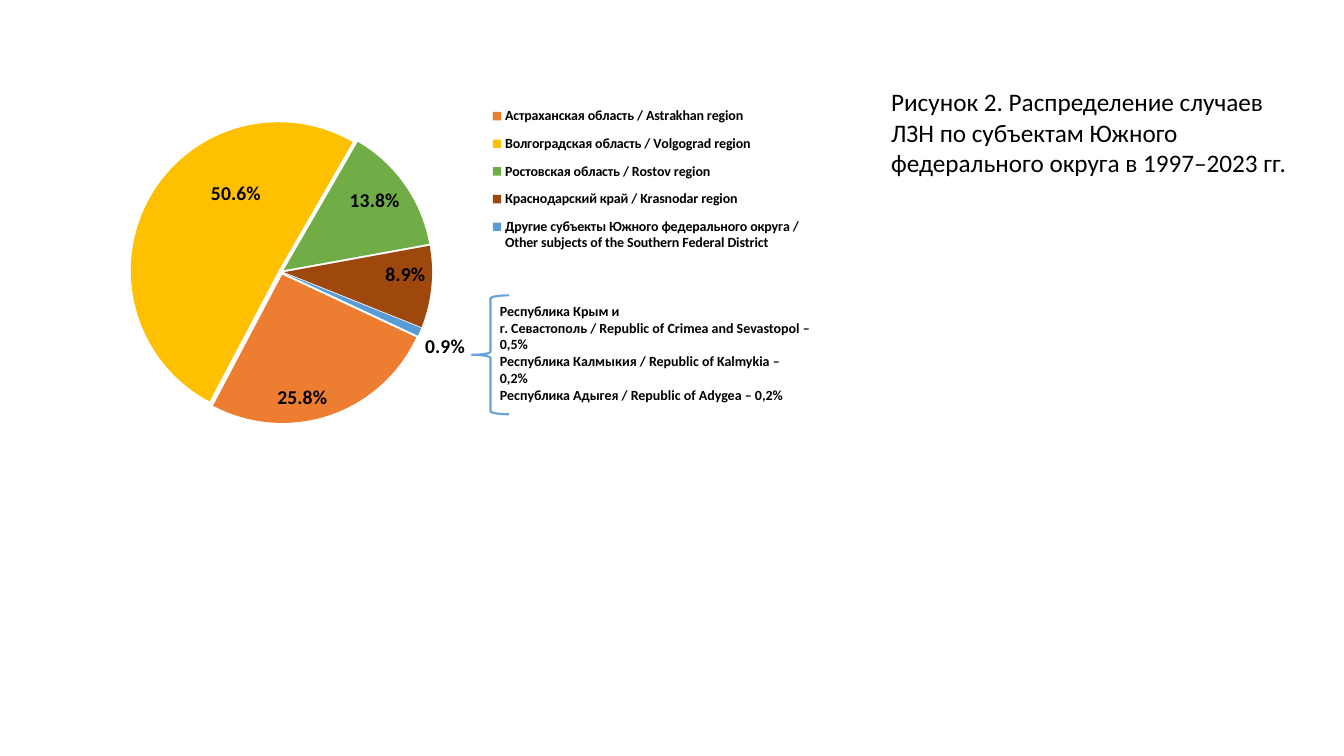
from lxml import etree
from pptx import Presentation
from pptx.chart.data import CategoryChartData
from pptx.dml.color import RGBColor
from pptx.enum.chart import XL_CHART_TYPE, XL_LABEL_POSITION, XL_LEGEND_POSITION
from pptx.enum.shapes import MSO_SHAPE
from pptx.util import Inches, Pt

PIE = XL_CHART_TYPE.PIE
RIGHT = XL_LEGEND_POSITION.RIGHT
INSIDE = XL_LABEL_POSITION.INSIDE_END
OUTSIDE = XL_LABEL_POSITION.OUTSIDE_END
CENTER = XL_LABEL_POSITION.CENTER
BRACE = MSO_SHAPE.LEFT_BRACE
FONT = "Calibri"
NS = "http://schemas.openxmlformats.org/drawingml/2006/chart"

# Region, share, colour, label position
REGIONS = [
    ("Астраханская область / Astrakhan region", 0.258, "ED7D31", INSIDE),
    ("Волгоградская область / Volgograd region", 0.506, "FFC000", CENTER),
    ("Ростовская область / Rostov region", 0.138, "70AD47", INSIDE),
    ("Краснодарский край / Krasnodar region", 0.089, "9E480E", INSIDE),
    ("Другие субъекты Южного федерального округа / "
     "Other subjects of the Southern Federal District", 0.009, "5B9BD5", OUTSIDE),
]
OTHERS = [
    "Республика Крым и",
    "г. Севастополь / Republic of Crimea and Sevastopol – 0,5%",
    "Республика Калмыкия / Republic of Kalmykia –",
    "0,2%",
    "Республика Адыгея / Republic of Adygea – 0,2%",
]
TITLE = ("Рисунок 2. Распределение случаев ЛЗН по субъектам Южного "
         "федерального округа в 1997–2023 гг.")


def color(code):
    return RGBColor.from_string(code)


def style(font, size, bold=False, code="000000"):
    font.name, font.size, font.bold = FONT, Pt(size), bold
    font.color.rgb = color(code)


def node(tag, **attrs):
    item = etree.Element(f"{{{NS}}}{tag}")
    for key, value in attrs.items():
        item.set(key, str(value))
    return item


def layout(**values):
    """Manual chart layout with fractions of the chart size."""
    outer = node("layout")
    inner = node("manualLayout")
    outer.append(inner)
    for tag, value in values.items():
        inner.append(node(tag, val=value))
    return outer


def place(parent, after, item):
    """Put a chart element right behind the named child."""
    parent.find(f"{{{NS}}}{after}").addnext(item)


def add_text(slide, box, lines, size, bold=False):
    frame = slide.shapes.add_textbox(*map(Inches, box)).text_frame
    frame.word_wrap = True
    for i, line in enumerate(lines):
        para = frame.paragraphs[0] if i == 0 else frame.add_paragraph()
        run = para.add_run()
        run.text = line
        style(run.font, size, bold)


def add_pie(slide, box):
    data = CategoryChartData(number_format="0.0%")
    data.categories = [region[0] for region in REGIONS]
    data.add_series("Series 1", [region[1] for region in REGIONS])
    chart = slide.shapes.add_chart(PIE, *map(Inches, box), data).chart
    chart.has_title = False
    style(chart.font, 10)

    # Legend
    chart.has_legend = True
    legend = chart.legend
    legend.position, legend.include_in_layout = RIGHT, False
    style(legend.font, 10, True)
    old = legend._element.find(f"{{{NS}}}layout")
    if old is not None:
        legend._element.remove(old)
    place(legend._element, "legendPos",
          layout(xMode="edge", yMode="edge", x=0.57, y=0.04, w=0.43, h=0.45))

    # Plot area, rotation and gaps between slices
    area = chart._chartSpace.chart.plotArea
    old = area.find(f"{{{NS}}}layout")
    if old is not None:
        area.remove(old)
    area.insert(0, layout(layoutTarget="inner", xMode="edge", yMode="edge",
                          x=0.083, y=0.032, w=0.411, h=0.968))
    plot = chart.plots[0]
    plot.vary_by_categories = True
    series = plot.series[0]
    place(series._element, "tx", node("explosion", val=2))
    place(area.find(f"{{{NS}}}pieChart"), "ser", node("firstSliceAng", val=115))

    # Slices and labels
    for i, (_, _, code, spot) in enumerate(REGIONS):
        point = series.points[i]
        point.format.fill.solid()
        point.format.fill.fore_color.rgb = color(code)
        label = point.data_label
        style(label.font, 14, True)
        label.position = spot
        if spot == CENTER:
            entry = series._element.find(f".//{{{NS}}}dLbl[{{{NS}}}idx][{i + 1}]")
            place(entry, "idx", layout(x=0.03, y=-0.11))


def add_others(slide, box):
    left, top, width, height = box
    brace = slide.shapes.add_shape(
        BRACE, *map(Inches, (left, top, 0.37, height)))
    brace.shadow.inherit = False
    brace.fill.background()
    brace.line.color.rgb = color("67A2D8")
    brace.line.width = Pt(1.5)
    add_text(slide, (left + 0.18, top + 0.02, width - 0.18, 0.88), OTHERS, 10, True)


def main():
    deck = Presentation()
    deck.slide_width, deck.slide_height = Inches(13.33), Inches(7.5)
    slide = deck.slides.add_slide(deck.slide_layouts[6])
    add_pie(slide, (0.69, 0.81, 7.3, 3.66))
    add_others(slide, (4.68, 2.93, 3.66, 1.18))
    add_text(slide, (8.74, 0.81, 4.16, 1.01), [TITLE], 18)
    deck.save("out.pptx")


if __name__ == "__main__":
    main()
